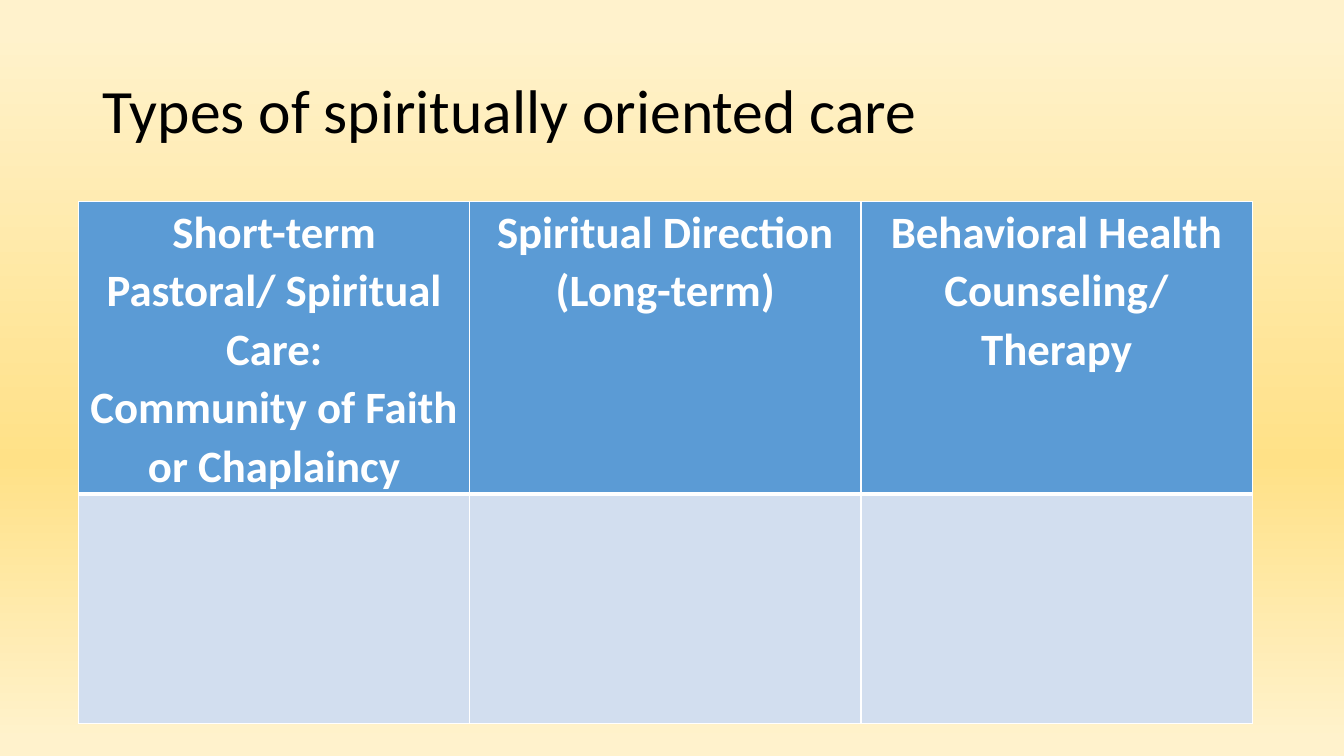
from copy import deepcopy
from dataclasses import dataclass

from lxml.etree import SubElement
from pptx import Presentation
from pptx.dml.color import RGBColor
from pptx.enum.text import MSO_ANCHOR, PP_ALIGN
from pptx.oxml.ns import qn
from pptx.util import Inches, Pt

WHITE = "FFFFFF"
BACKGROUND_STOPS = [(0.04, "FFF2CC"), (0.61, "FFE187"), (0.98, "FFF2CC")]
TITLE_FORMAT = {"size": Pt(44), "name": "Calibri", "bold": False}
HEADER_FORMAT = {"size": Pt(32), "name": "Calibri", "bold": True}
CELL_MARGINS = {"margin_left": Inches(0.07), "margin_right": Inches(0.07),
                "margin_top": 0, "margin_bottom": 0}


@dataclass
class TableRow:
    height: float
    fill: str
    borders: dict[str, float]
    cells: list[list[str]]


CARE_ROWS = [
    TableRow(2.9, "5B9BD5", {"L": 1, "R": 1, "T": 1, "B": 3}, [
        ["Short-term Pastoral/ Spiritual Care:", "Community of Faith or Chaplaincy"],
        ["Spiritual Direction", "(Long-term)"],
        ["Behavioral Health Counseling/", "Therapy"],
    ]),
    TableRow(2.28, "D2DEEF", {"L": 1, "R": 1, "T": 3, "B": 1}, [[], [], []]),
]


def color(hex_code: str) -> RGBColor:
    return RGBColor.from_string(hex_code)


def apply_format(target, values: dict) -> None:
    for name, value in values.items():
        setattr(target, name, value)


def write_paragraph(p, text: str, font_format: dict, hex_code: str, spacing: float) -> None:
    p.line_spacing = spacing
    r = p.add_run()
    r.text = text
    apply_format(r.font, font_format)
    r.font.color.rgb = color(hex_code)


def set_borders(cell, widths: dict[str, float]) -> None:
    properties = cell._tc.get_or_add_tcPr()
    for side, width in widths.items():
        line = SubElement(properties, qn(f"a:ln{side}"), w=str(Pt(width)))
        SubElement(SubElement(line, qn("a:solidFill")), qn("a:srgbClr"), val=WHITE)


def paint_background(s) -> None:
    fill = s.background.fill
    fill.gradient()
    fill.gradient_angle = 270  # counter-clockwise, so the stops run downwards
    stop_list = s.element.find(f".//{qn('a:gsLst')}")
    stop_list.append(deepcopy(stop_list[-1]))
    for stop, (position, hex_code) in zip(fill.gradient_stops, BACKGROUND_STOPS):
        stop.position = position
        stop.color.rgb = color(hex_code)


def add_title(s, text: str) -> None:
    sp = s.shapes.add_textbox(Inches(0.92), Inches(0.4), Inches(11.5), Inches(1.45))
    tf = sp.text_frame
    tf.word_wrap = True
    tf.vertical_anchor = MSO_ANCHOR.MIDDLE
    write_paragraph(tf.paragraphs[0], text, TITLE_FORMAT, "000000", 0.9)


def fill_cell(cell, row: TableRow, lines: list[str]) -> None:
    set_borders(cell, row.borders)
    cell.fill.solid()
    cell.fill.fore_color.rgb = color(row.fill)
    apply_format(cell, CELL_MARGINS)
    tf = cell.text_frame
    for i, text in enumerate(lines):
        p = tf.add_paragraph() if i else tf.paragraphs[0]
        p.alignment = PP_ALIGN.CENTER
        write_paragraph(p, text, HEADER_FORMAT, WHITE, 1.07)


def add_care_table(s, rows: list[TableRow]) -> None:
    height = sum(row.height for row in rows)
    table = s.shapes.add_table(len(rows), len(rows[0].cells), Inches(0.78), Inches(2),
                               Inches(11.64), Inches(height)).table
    for i, row in enumerate(rows):
        table.rows[i].height = Inches(row.height)
        for j, lines in enumerate(row.cells):
            fill_cell(table.cell(i, j), row, lines)


def main() -> None:
    prs = Presentation()
    prs.slide_width, prs.slide_height = Inches(13.33), Inches(7.5)
    s = prs.slides.add_slide(prs.slide_layouts[6])
    paint_background(s)
    add_title(s, "Types of spiritually oriented care")
    add_care_table(s, CARE_ROWS)
    prs.save("out.pptx")


if __name__ == "__main__":
    main()
